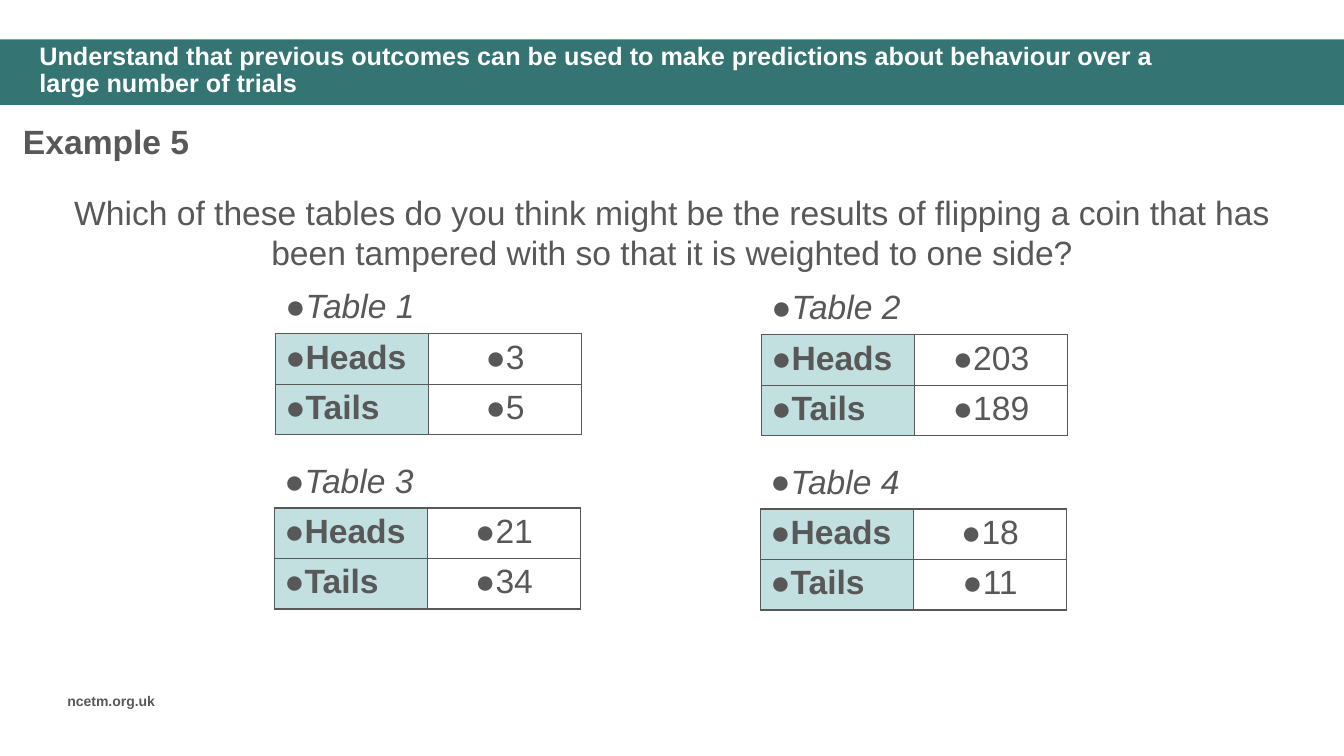
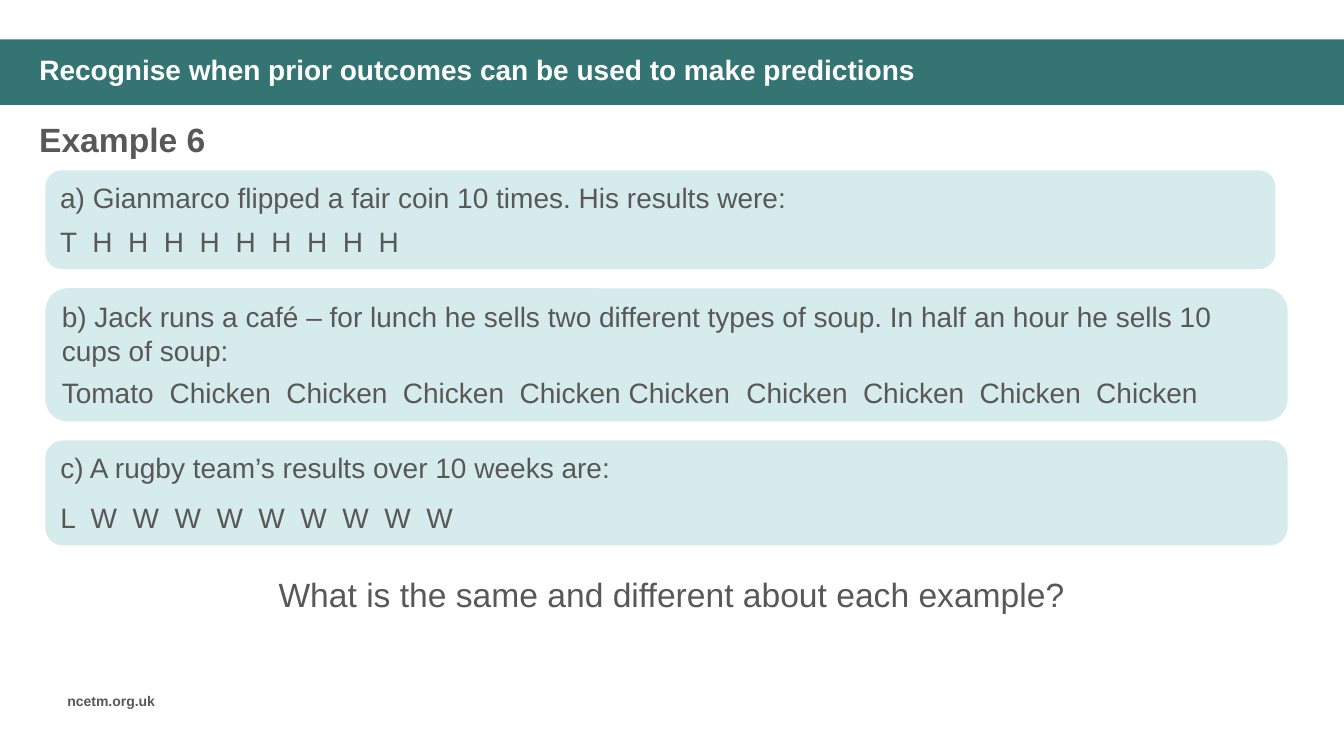
"""Build two lesson slides on predicting from previous outcomes."""
from lxml import etree
from pptx import Presentation
from pptx.dml.color import RGBColor
from pptx.enum.shapes import MSO_SHAPE
from pptx.enum.text import MSO_ANCHOR, MSO_AUTO_SIZE, PP_ALIGN
from pptx.oxml.ns import qn
from pptx.util import Inches, Pt

RECTANGLE, ROUNDED = MSO_SHAPE.RECTANGLE, MSO_SHAPE.ROUNDED_RECTANGLE
LEFT, CENTER = PP_ALIGN.LEFT, PP_ALIGN.CENTER
TOP, MIDDLE = MSO_ANCHOR.TOP, MSO_ANCHOR.MIDDLE
NO_AUTOFIT = MSO_AUTO_SIZE.NONE

FONT = "Arial"
TEAL, CARD_FILL, LABEL_FILL = "347574", "D6EBEB", "C2E0E0"
GREY, WHITE = "585858", "FFFFFF"
WIDTH, HEIGHT = 13.33, 7.5
BAND = (0, 0.39, WIDTH, 0.65)
TITLE = (0.29, 0.47, 11.58, 0.47)
FOOTER = (0.57, 6.82, 1.21, 0.27)

COIN_SLIDE = {
    "title": "Understand that previous outcomes can be used to make predictions "
             "about behaviour over a large number of trials",
    "title_size": 18,
    "heading": ("Example 5", (0.13, 1.15, 6.66, 0.5)),
    "question": ("Which of these tables do you think might be the results of flipping "
                 "a coin that has been tampered with so that it is weighted to one side?",
                 (0.27, 1.85, 12.79, 0.91)),
}
COIN_RESULTS = [("Table 1", 3, 5), ("Table 2", 203, 189),
                ("Table 3", 21, 34), ("Table 4", 18, 11)]
TABLE_LEFT, TABLE_TOP = 2.73, 2.81
TABLE_PITCH_X, TABLE_PITCH_Y, TABLE_SHIFT = 4.82, 1.73, 0.01
COLUMN_WIDTH, ROW_HEIGHT = 1.52, 0.5

COMPARE_SLIDE = {
    "title": "Recognise when prior outcomes can be used to make predictions",
    "title_size": 20,
    "heading": ("Example 6", (0.29, 1.13, 6.66, 0.5)),
    "question": ("What is the same and different about each example?",
                 (1.95, 5.64, 9.42, 0.5)),
}
CARD_LEFT, CARD_TOP, CARD_GAP = 0.45, 1.69, 0.19
CARDS = [
    {"text": "a) Gianmarco flipped a fair coin 10 times. His results were:",
     "outcomes": ["T"] + ["H"] * 9, "size": (12.2, 0.98), "after": 8,
     "tab_ranges": [(0.32, 3.16, 9)]},
    {"text": "b) Jack runs a café – for lunch he sells two different types of soup. "
             "In half an hour he sells 10 cups of soup:",
     "outcomes": ["Tomato"] + ["Chicken"] * 3 + ["Chicken Chicken"] + ["Chicken"] * 4,
     "size": (12.32, 1.32), "after": 6,
     "tab_ranges": [(1.07, 4.54, 4), (6.79, 10.26, 4)]},
    {"text": "c) A rugby team’s results over 10 weeks are:",
     "outcomes": ["L"] + ["W"] * 9, "size": (12.32, 1.04), "after": 12,
     "tab_ranges": [(0.3, 3.63, 9)]},
]


def rgb(value):
    """Return the colour for a hex string."""
    return RGBColor.from_string(value)


def box(values):
    """Convert a tuple of inches to lengths."""
    return [Inches(value) for value in values]


def style(paragraph, size, color=GREY, bold=False, italic=False, align=LEFT):
    """Format a paragraph and its runs."""
    paragraph.alignment = align
    for run in paragraph.runs:
        run.font.name, run.font.size = FONT, Pt(size)
        run.font.bold, run.font.italic = bold, italic
        run.font.color.rgb = rgb(color)


def add_text(slide, text, place, size, **options):
    """Add a wrapped text box of one paragraph."""
    text_frame = slide.shapes.add_textbox(*box(place)).text_frame
    text_frame.word_wrap = True
    text_frame.text = text
    style(text_frame.paragraphs[0], size, **options)


def add_panel(slide, kind, place, fill):
    """Add a filled shape without outline or shadow."""
    shape = slide.shapes.add_shape(kind, *box(place))
    shape.shadow.inherit = False
    shape.fill.solid()
    shape.fill.fore_color.rgb = rgb(fill)
    shape.line.fill.background()
    return shape


def prepare_layout(layout, slide):
    """Move the band and footer, drawn on a slide, to the shared layout."""
    for placeholder in list(layout.placeholders):
        if placeholder.placeholder_format.idx:
            placeholder.element.getparent().remove(placeholder.element)
    title = layout.placeholders[0]
    title.left, title.top, title.width, title.height = box(TITLE)
    add_panel(slide, RECTANGLE, BAND, TEAL)
    add_text(slide, "ncetm.org.uk", FOOTER, 10, bold=True)
    for shape in list(slide.shapes)[1:]:
        title.element.getparent().append(shape.element)


def fill_slide(slide, content):
    """Write the title, heading and question of a slide."""
    text_frame = slide.shapes.title.text_frame
    text_frame.text = content["title"]
    text_frame.word_wrap = True
    text_frame.auto_size = NO_AUTOFIT
    text_frame.vertical_anchor = MIDDLE
    text_frame.paragraphs[0].line_spacing = 0.9
    style(text_frame.paragraphs[0], content["title_size"], WHITE, bold=True)
    add_text(slide, *content["heading"], 24, bold=True)
    add_text(slide, *content["question"], 24, align=CENTER)


def set_borders(cell, sides):
    """Draw one-point grey lines on the named sides of a cell."""
    properties = cell._tc.get_or_add_tcPr()
    for side in sides:
        line = etree.SubElement(properties, qn(f"a:ln{side}"), w=str(Pt(1)))
        solid = etree.SubElement(line, qn("a:solidFill"))
        etree.SubElement(solid, qn("a:srgbClr"), val=GREY)


def fill_cell(cell, text, borders, fill=None, **options):
    """Write a bulleted cell with its borders and fill."""
    set_borders(cell, borders)
    if fill:
        cell.fill.solid()
        cell.fill.fore_color.rgb = rgb(fill)
    else:
        cell.fill.background()
    cell.text = text
    paragraph = cell.text_frame.paragraphs[0]
    properties = paragraph._p.get_or_add_pPr()
    properties.set("marL", "0")
    properties.set("indent", "0")
    etree.SubElement(properties, qn("a:buFont"), typeface=FONT)
    etree.SubElement(properties, qn("a:buChar"), char="●")
    style(paragraph, 24, **options)


def add_results_table(slide, index, name, heads, tails):
    """Add one captioned table of coin results at its place in the grid."""
    row, column = divmod(index, 2)
    place = (TABLE_LEFT + column * TABLE_PITCH_X - row * TABLE_SHIFT,
             TABLE_TOP + row * TABLE_PITCH_Y + column * TABLE_SHIFT,
             2 * COLUMN_WIDTH, 3 * ROW_HEIGHT)
    table = slide.shapes.add_table(3, 2, *box(place)).table
    table.first_row = table.horz_banding = False
    table.cell(0, 0).merge(table.cell(0, 1))
    fill_cell(table.cell(0, 0), name, "B", italic=True)
    set_borders(table.cell(0, 1), "B")
    table.cell(0, 1).fill.background()
    for position, (label, count) in enumerate((("Heads", heads), ("Tails", tails)), 1):
        fill_cell(table.cell(position, 0), label, "LRTB", LABEL_FILL, bold=True)
        fill_cell(table.cell(position, 1), str(count), "LRTB", align=CENTER)


def add_tabs(paragraph, ranges):
    """Give a paragraph tab stops, evenly spaced within each range."""
    tabs = etree.SubElement(paragraph._p.get_or_add_pPr(), qn("a:tabLst"))
    for first, last, count in ranges:
        for index in range(count):
            position = first + (last - first) * index / (count - 1)
            etree.SubElement(tabs, qn("a:tab"), pos=str(Inches(position)), algn="l")


def add_card(slide, card, top):
    """Add a rounded card with a statement and a row of outcomes."""
    shape = add_panel(slide, ROUNDED, (CARD_LEFT, top, *card["size"]), CARD_FILL)
    text_frame = shape.text_frame
    text_frame.word_wrap = True
    text_frame.vertical_anchor = TOP
    text_frame.text = card["text"]
    outcomes = text_frame.add_paragraph()
    outcomes.text = "\t".join(card["outcomes"])
    add_tabs(outcomes, card["tab_ranges"])
    for paragraph in text_frame.paragraphs:
        paragraph.space_after = Pt(card["after"])
        style(paragraph, 20)


def main():
    """Build and save the presentation."""
    presentation = Presentation()
    presentation.slide_width, presentation.slide_height = box((WIDTH, HEIGHT))
    layout = presentation.slide_layouts[5]
    coin_slide, compare_slide = [presentation.slides.add_slide(layout) for _ in range(2)]
    prepare_layout(layout, coin_slide)

    fill_slide(coin_slide, COIN_SLIDE)
    for index, results in enumerate(COIN_RESULTS):
        add_results_table(coin_slide, index, *results)

    fill_slide(compare_slide, COMPARE_SLIDE)
    top = CARD_TOP
    for card in CARDS:
        add_card(compare_slide, card, top)
        top += card["size"][1] + CARD_GAP
    presentation.save("out.pptx")


if __name__ == "__main__":
    main()
